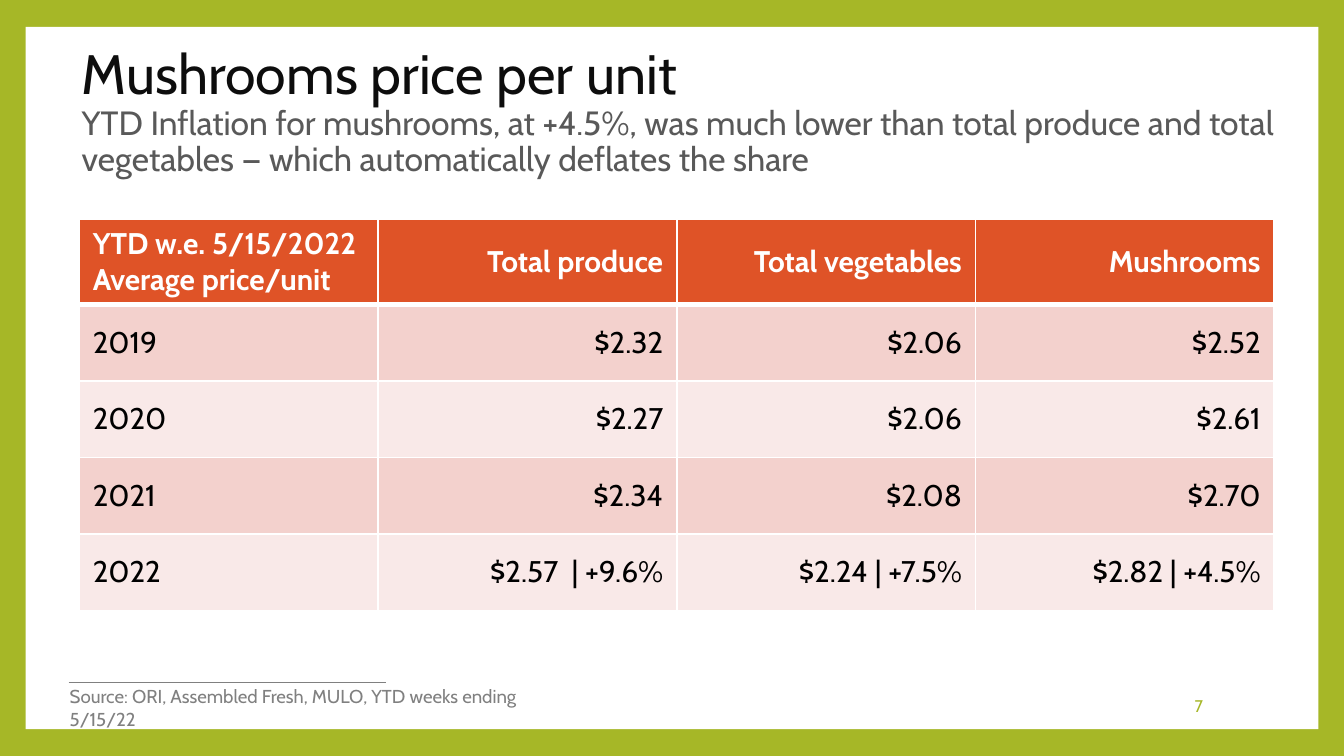
from dataclasses import dataclass

from lxml import etree
from pptx import Presentation
from pptx.dml.color import RGBColor
from pptx.enum.shapes import MSO_CONNECTOR, MSO_SHAPE
from pptx.enum.text import MSO_ANCHOR, PP_ALIGN
from pptx.oxml.ns import qn
from pptx.util import Inches, Pt

LEFT, RIGHT = PP_ALIGN.LEFT, PP_ALIGN.RIGHT
TOP, MIDDLE = MSO_ANCHOR.TOP, MSO_ANCHOR.MIDDLE

TITLE = "Mushrooms price per unit"
SUBTITLE = ("YTD Inflation for mushrooms, at +4.5%, was much lower than total "
            "produce and total vegetables — which automatically deflates the share")
SOURCE = "Source: ORI, Assembled Fresh, MULO, YTD weeks ending 5/15/22"
PAGE_NUMBER = "7"
PRICES = [
    ["YTD w.e. 5/15/2022\nAverage price/unit", "Total produce",
     "Total vegetables", "Mushrooms"],
    ["2019", "$2.32", "$2.06", "$2.52"],
    ["2020", "$2.27", "$2.06", "$2.61"],
    ["2021", "$2.34", "$2.08", "$2.70"],
    ["2022", "$2.57  | +9.6%", "$2.24 | +7.5%", "$2.82 | +4.5%"],
]

WIDTH = 10
HEIGHT = WIDTH * 9 / 16
FRAME_X, FRAME_Y = 0.19, 0.2
TABLE_LEFT, TABLE_TOP, TABLE_WIDTH = 0.59, 1.63, 8.89
HEADER_HEIGHT, ROW_HEIGHT = 0.62, 0.57


@dataclass(frozen=True)
class Theme:
    font: str = "Cabin"
    green: str = "A6B727"
    white: str = "FFFFFF"
    grey: str = "808080"
    title: str = "0D0D0D"
    subtitle: str = "595959"
    body: str = "000000"
    header: str = "DF5327"
    bands: tuple = ("F3D1CD", "F9E9E8")
    title_size: float = 29.7
    subtitle_size: float = 18
    table_size: float = 16
    source_size: float = 10
    number_size: float = 9


THEME = Theme()


def paint(fill, color):
    fill.solid()
    fill.fore_color.rgb = RGBColor.from_string(color)


def style(font, size, color, bold=False):
    font.name, font.size, font.bold = THEME.font, Pt(size), bold
    font.color.rgb = RGBColor.from_string(color)


def add_text(page, place, text, size, color, align=LEFT, anchor=TOP):
    box = page.shapes.add_textbox(*map(Inches, place))
    frame = box.text_frame
    frame.word_wrap, frame.vertical_anchor = True, anchor
    para = frame.paragraphs[0]
    para.alignment = align
    span = para.add_run()
    span.text = text
    style(span.font, size, color)
    return para


def add_backdrop(page):
    paint(page.background.fill, THEME.green)
    panel = page.shapes.add_shape(MSO_SHAPE.RECTANGLE, *map(Inches, (
        FRAME_X, FRAME_Y, WIDTH - 2 * FRAME_X, HEIGHT - 2 * FRAME_Y)))
    panel.shadow.inherit = False
    paint(panel.fill, THEME.white)
    panel.line.fill.background()
    rule = page.shapes.add_connector(
        MSO_CONNECTOR.STRAIGHT, *map(Inches, (0.51, 5.08, 2.87, 5.08)))
    rule.line.width = Pt(0.79)
    paint(rule.line.fill, THEME.grey)
    etree.SubElement(rule._element.spPr, qn("a:effectLst"))


def set_borders(cell, bottom):
    """White lines on all sides; the bottom width is given in points."""
    properties = cell._tc.get_or_add_tcPr()
    widths = {"lnL": 1, "lnR": 1, "lnT": 1, "lnB": bottom}
    for index, (side, width) in enumerate(widths.items()):
        line = etree.Element(qn(f"a:{side}"), w=str(Pt(width)))
        fill = etree.SubElement(line, qn("a:solidFill"))
        etree.SubElement(fill, qn("a:srgbClr"), val=THEME.white)
        properties.insert(index, line)


def add_price_table(page):
    rows, columns = len(PRICES), len(PRICES[0])
    height = HEADER_HEIGHT + (rows - 1) * ROW_HEIGHT
    table = page.shapes.add_table(rows, columns, *map(Inches, (
        TABLE_LEFT, TABLE_TOP, TABLE_WIDTH, height))).table
    for column in table.columns:
        column.width = Inches(TABLE_WIDTH / columns)
    for r, texts in enumerate(PRICES):
        header = r == 0
        table.rows[r].height = Inches(HEADER_HEIGHT if header else ROW_HEIGHT)
        for c, text in enumerate(texts):
            cell = table.cell(r, c)
            cell.text = text
            cell.vertical_anchor = MIDDLE
            paint(cell.fill, THEME.header if header else THEME.bands[(r - 1) % 2])
            set_borders(cell, bottom=3 if header else 1)
            for para in cell.text_frame.paragraphs:
                para.alignment = RIGHT if c else LEFT
                style(para.font, THEME.table_size,
                      THEME.white if header else THEME.body, header)


def main():
    deck = Presentation()
    deck.slide_width, deck.slide_height = Inches(WIDTH), Inches(HEIGHT)
    page = deck.slides.add_slide(deck.slide_layouts[6])
    add_backdrop(page)
    heading = add_text(page, (0.51, 0.57, 9.43, 0.54), TITLE,
                       THEME.title_size, THEME.title, anchor=MIDDLE)
    heading.line_spacing = 0.9
    heading.add_line_break()
    span = heading.add_run()
    span.text = SUBTITLE
    style(span.font, THEME.subtitle_size, THEME.subtitle)
    add_text(page, (7.65, 5.1, 1.4, 0.3), PAGE_NUMBER,
             THEME.number_size, THEME.green, RIGHT, MIDDLE)
    add_text(page, (0.42, 5.05, 3.89, 0.27), SOURCE,
             THEME.source_size, THEME.grey)
    add_price_table(page)
    deck.save("out.pptx")


if __name__ == "__main__":
    main()
